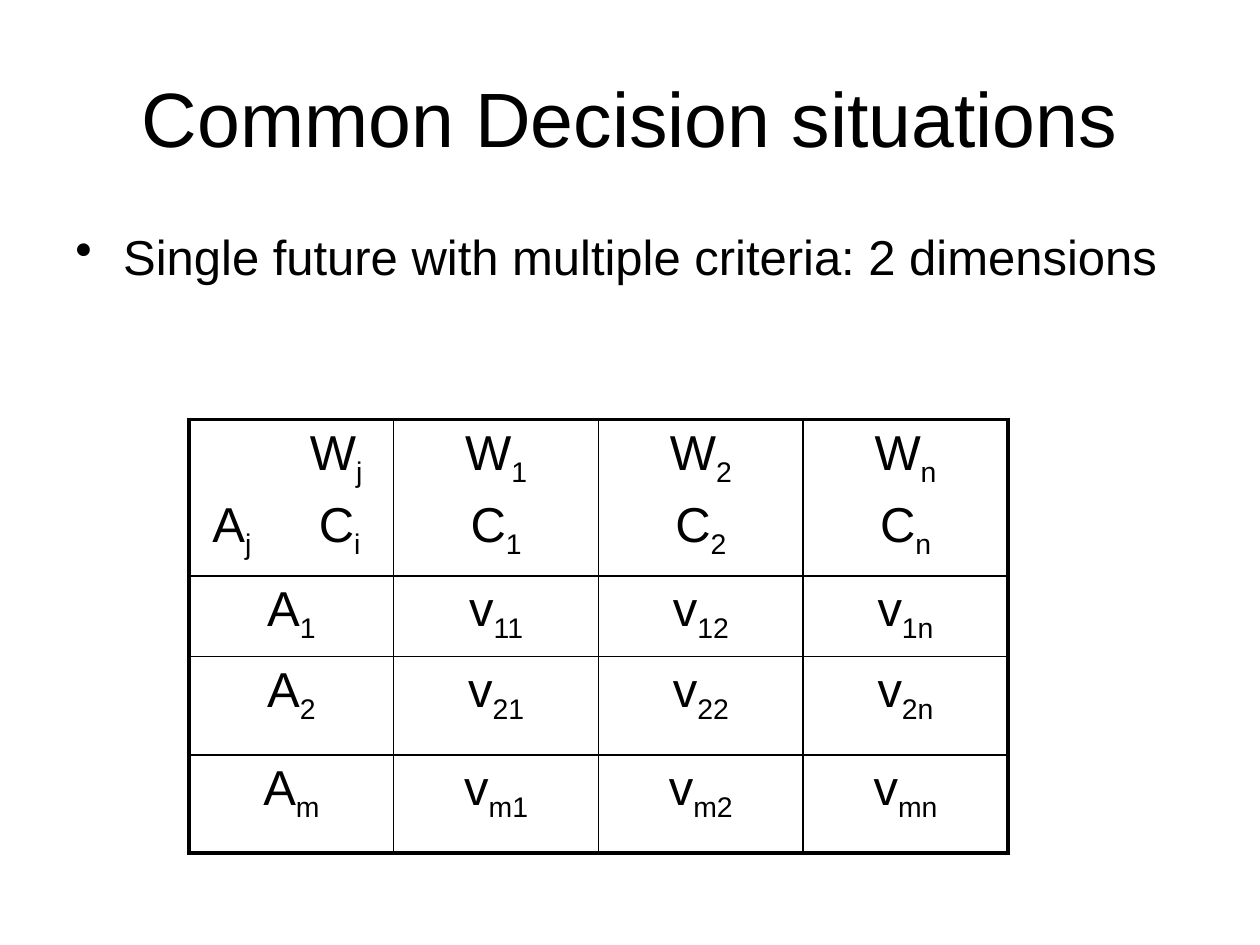
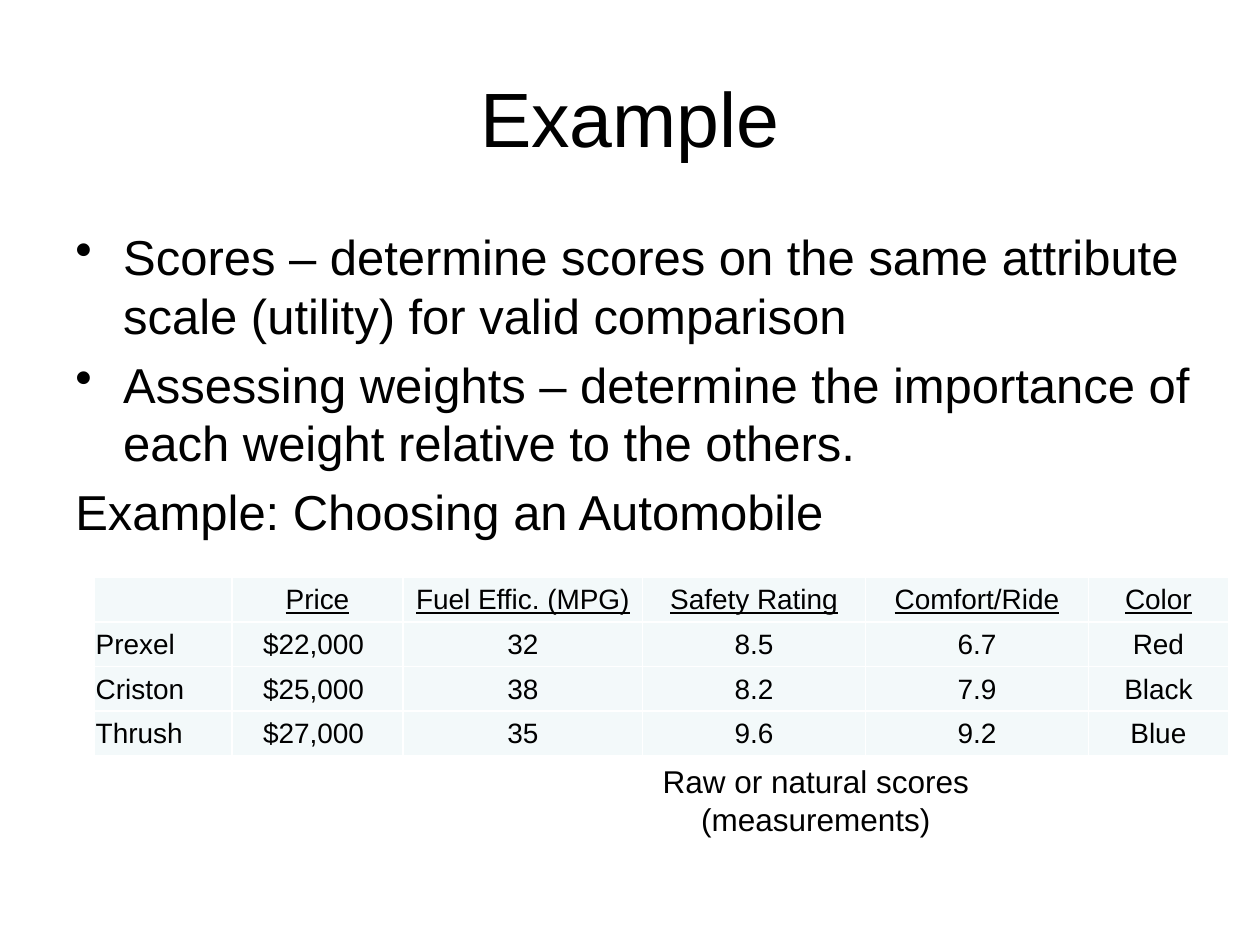
"""Builds two slides on decision situations and scoring alternatives."""
from lxml.etree import SubElement
from pptx import Presentation
from pptx.dml.color import RGBColor
from pptx.enum.text import MSO_ANCHOR as Anchor, PP_ALIGN as Align
from pptx.oxml.ns import qn
from pptx.util import Inches, Pt

BLACK = RGBColor(0x00, 0x00, 0x00)
WHITE = RGBColor(0xFF, 0xFF, 0xFF)
PALE = RGBColor(0xF3, 0xF9, 0xFA)
FONT = "Arial"
BULLET = "• "
THIN, THICK = 1, 2.25


def write(tf, lines, size=28, align=Align.LEFT, before=0.0, hang=0.0, underline=False, tabs=()):
    """Fill a frame; pieces after odd underscores are subscripts, tabs gives a stop per line."""
    for i, line in enumerate(lines):
        p = tf.paragraphs[0] if i == 0 else tf.add_paragraph()
        p.alignment = align
        p.space_before = Pt(size * before)
        pPr = p._p.get_or_add_pPr()
        if hang:
            pPr.set("marL", str(Inches(hang)))
            pPr.set("indent", str(-Inches(hang)))
        if line.startswith(BULLET):
            SubElement(pPr, qn("a:buChar"), char=BULLET.strip())
        else:
            SubElement(pPr, qn("a:buNone"))
        if tabs:
            stops = SubElement(pPr, qn("a:tabLst"))
            SubElement(stops, qn("a:tab"), pos=str(Inches(tabs[i])), algn="l")
        for n, piece in enumerate(line.removeprefix(BULLET).split("_")):
            r = p.add_run()
            r.text = piece
            r.font.name, r.font.size = FONT, Pt(size)
            r.font.color.rgb = BLACK
            if underline:
                r.font.underline = True
            if n % 2:
                r.font._element.set("baseline", "-25000")


def set_border(cell, side, color, width):
    """Draw one side (L, R, T or B) of a cell."""
    ln = SubElement(cell._tc.get_or_add_tcPr(), qn(f"a:ln{side}"), w=str(Pt(width)))
    SubElement(SubElement(ln, qn("a:solidFill")), qn("a:srgbClr"), val=str(color))


class Deck:
    """Holds the presentation, the current slide and the shared style."""

    def __init__(self):
        self.prs = Presentation()
        self.prs.slide_width, self.prs.slide_height = Inches(10), Inches(7.5)
        self.s = None

    def slide(self, title):
        """Start a slide with a centred title."""
        self.s = self.prs.slides.add_slide(self.prs.slide_layouts[5])
        sp = self.s.shapes.title
        sp.left, sp.top, sp.width, sp.height = Inches(0.5), Inches(0.3), Inches(9), Inches(1.25)
        sp.text_frame.vertical_anchor = Anchor.MIDDLE
        write(sp.text_frame, [title], size=44, align=Align.CENTER)

    def text(self, box, lines, **fmt):
        """Add a wrapping text box."""
        tf = self.s.shapes.add_textbox(*map(Inches, box)).text_frame
        tf.word_wrap = True
        write(tf, lines, **fmt)

    def body(self, width, height, lines):
        """Add the main text under the title."""
        self.text((0.5, 1.75, width, height), lines, before=0.2, hang=0.38)

    def table(self, left, top, widths, heights, line, outer=THIN, fill=None):
        """Add a plain bordered table and return it."""
        box = map(Inches, (left, top, sum(widths), sum(heights)))
        table = self.s.shapes.add_table(len(heights), len(widths), *box).table
        table.first_row = table.horz_banding = False
        for column, width in zip(table.columns, widths):
            column.width = Inches(width)
        for row, height in zip(table.rows, heights):
            row.height = Inches(height)
        last_row, last_col = len(heights) - 1, len(widths) - 1
        for i, row in enumerate(table.rows):
            for j, cell in enumerate(row.cells):
                edges = {"L": j == 0, "R": j == last_col, "T": i == 0, "B": i == last_row}
                for side, is_outer in edges.items():
                    set_border(cell, side, line, outer if is_outer else THIN)
                if fill is None:
                    cell.fill.background()
                else:
                    cell.fill.solid()
                    cell.fill.fore_color.rgb = fill
        return table


def decision_situations(deck):
    """Decision matrix of alternatives against weighted criteria."""
    deck.slide("Common Decision situations")
    deck.body(9, 0.92, [BULLET + "Single future with multiple criteria: 2 dimensions"])
    table = deck.table(1.5, 3.33, [1.625] * 4, [1.17, 0.64, 0.78, 0.78], BLACK, outer=THICK)
    write(table.cell(0, 0).text_frame, ["\tW_j", " A_j_\tC_i"], before=0.2, tabs=(0.86, 0.93))
    criteria = ("1", "2", "n")
    for j, c in enumerate(criteria, 1):
        write(table.cell(0, j).text_frame, [f"W_{c}", f"C_{c}"], align=Align.CENTER, before=0.2)
    for i, a in enumerate(("1", "2", "m"), 1):
        for j, value in enumerate([f"A_{a}"] + [f"v_{a}{c}" for c in criteria]):
            write(table.cell(i, j).text_frame, [value], align=Align.CENTER, before=0.2)


def automobile_example(deck):
    """Raw scores of three automobiles."""
    deck.slide("Example")
    deck.body(9.17, 4.83, [
        BULLET + "Scores – determine scores on the same attribute scale (utility) for valid comparison",
        BULLET + "Assessing weights – determine the importance of each weight relative to the others.",
        "Example: Choosing an Automobile",
    ])
    deck.text((4.62, 6, 3.71, 0.71), ["Raw or natural scores (measurements)"],
              size=18, align=Align.CENTER, before=0.5)
    rows = [
        ("", "Price", "Fuel Effic. (MPG)", "Safety Rating", "Comfort/Ride", "Color"),
        ("Prexel", "$22,000 ", "32", "8.5", "6.7", "Red"),
        ("Criston", "$25,000 ", "38", "8.2", "7.9", "Black"),
        ("Thrush", "$27,000 ", "35", "9.6", "9.2", "Blue"),
    ]
    widths = [1.09, 1.36, 1.9, 1.77, 1.77, 1.11]
    table = deck.table(0.75, 4.58, widths, [1.42 / 4] * 4, WHITE, fill=PALE)
    for i, row in enumerate(rows):
        for j, value in enumerate(row):
            cell = table.cell(i, j)
            cell.vertical_anchor = Anchor.MIDDLE
            cell.margin_left = cell.margin_right = cell.margin_top = Inches(0.01)
            cell.margin_bottom = 0
            write(cell.text_frame, [value], size=16, underline=i == 0,
                  align=Align.CENTER if j else Align.LEFT)


def main():
    """Build and save the deck."""
    deck = Deck()
    decision_situations(deck)
    automobile_example(deck)
    deck.prs.save("out.pptx")


if __name__ == "__main__":
    main()
